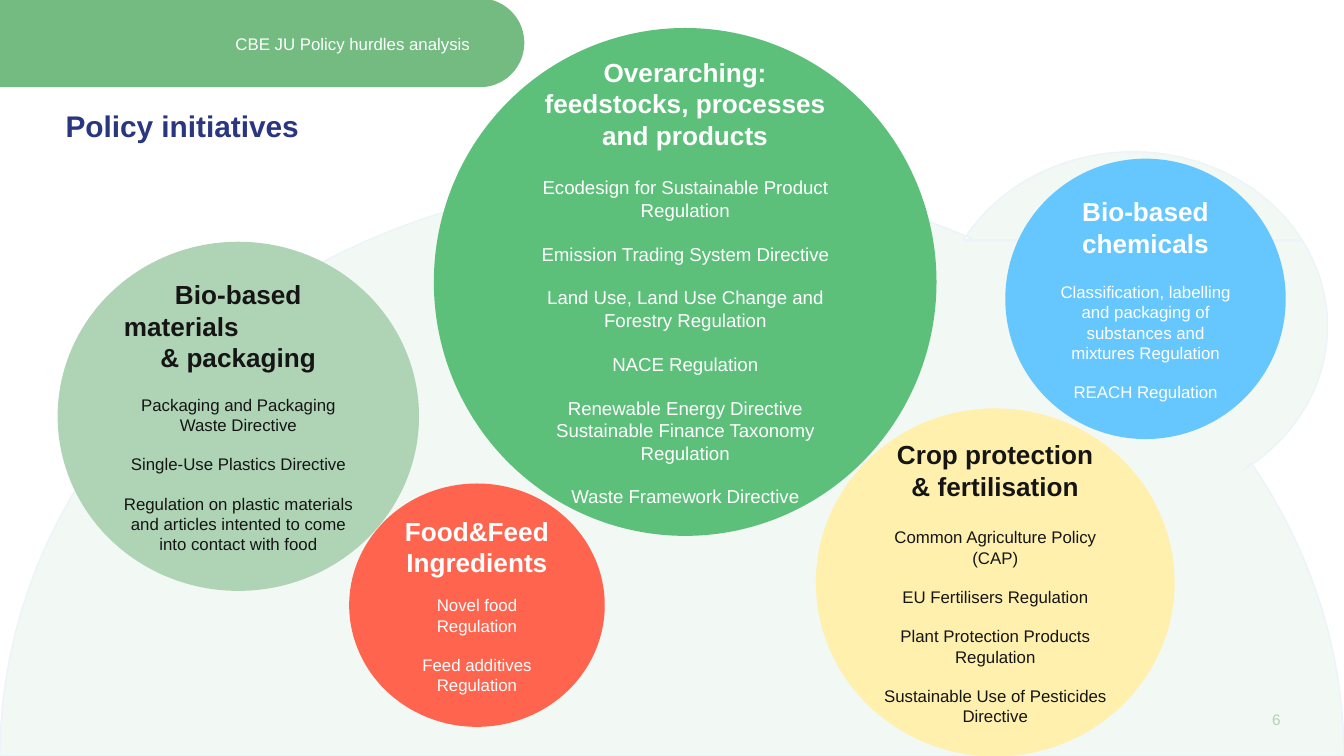
"""Builds the policy initiatives slide with one circle per sector."""
import math
from dataclasses import dataclass

import pptx
import pptx.dml.color
import pptx.enum.shapes
import pptx.enum.text
import pptx.oxml
import pptx.oxml.ns
import pptx.util

Cm, Pt = pptx.util.Cm, pptx.util.Pt
RGB = pptx.dml.color.RGBColor.from_string
Align = pptx.enum.text.PP_ALIGN


@dataclass(frozen=True)
class Theme:
    font: str = "Arial"
    white: str = "FFFFFF"
    ink: str = "151515"
    navy: str = "2A3680"
    banner: str = "73BB80"
    sage: str = "AED3B5"
    outline: str = "ECF4FA"
    green: str = "5DC07A"
    blue: str = "66C7FF"
    red: str = "FF644E"
    yellow: str = "FFF0AD"
    title: float = 16
    heading: float = 14
    large: float = 10
    small: float = 9
    number: float = 8.2
    line_height: float = 1.15


def arc(center, radii, start, end):
    """Points in EMU along an ellipse, with angles counter-clockwise in degrees."""
    steps = 48
    angles = [math.radians(start + (end - start) * i / steps) for i in range(steps + 1)]
    return [(Cm(center[0] + radii[0] * math.cos(a)), Cm(center[1] - radii[1] * math.sin(a)))
            for a in angles]


def write(paragraph, text, size, color, bold, paragraph_format):
    """Fill a paragraph with one formatted run."""
    for name, value in paragraph_format.items():
        setattr(paragraph, name, value)
    run = paragraph.add_run()
    run.text = text
    for name, value in {"name": theme.font, "size": Pt(size), "bold": bold}.items():
        setattr(run.font, name, value)
    run.font.color.rgb = RGB(color)


theme = Theme()
deck = pptx.Presentation()
deck.slide_width, deck.slide_height = Cm(25.4), Cm(14.29)
slide = deck.slides.add_slide(deck.slide_layouts[6])
shapes = slide.shapes

banner_outline = [(Cm(0), Cm(-0.03))] + arc((9.07, 0.81), (0.84, 0.84), 90, -90) + [(Cm(0), Cm(1.65))]

dome = {"center": (12.7, 14.29), "radii": (12.7, 10.93)}
hill = {"center": (21.41, 6.17), "radii": (3.68, 3.3)}
landscape_outline = (arc(**dome, start=180, end=63.5) + arc(**hill, start=150.5, end=150.5)
                     + arc(**hill, start=29.5, end=-55.5) + arc(**dome, start=30.5, end=0))
hill_top = arc(**hill, start=150.5, end=29.5)

for contours, color, opacity in (
    ([banner_outline], theme.banner, 100),
    ([landscape_outline, hill_top], theme.sage, 15),
):
    builder = shapes.build_freeform(*contours[0][0])
    builder.add_line_segments(contours[0][1:])
    for contour in contours[1:]:
        builder.move_to(*contour[0])
        builder.add_line_segments(contour[1:])
    backdrop = builder.convert_to_shape()
    backdrop.shadow.inherit = False
    backdrop.fill.solid()
    backdrop.fill.fore_color.rgb = RGB(color)
    if opacity == 100:
        backdrop.line.fill.background()
    else:
        backdrop.line.color.rgb = RGB(theme.outline)
        backdrop.line.width = Pt(0.75)
        tint = backdrop._element.spPr.find(pptx.oxml.ns.qn("a:solidFill"))[0]
        tint.append(pptx.oxml.parse_xml(
            f'<a:alpha {pptx.oxml.ns.nsdecls("a")} val="{opacity * 1000}"/>'))

for text, box, size, color, bold, alignment in (
    ("Policy initiatives", (1.24, 1.93, 9.53, 0.97), theme.title, theme.navy, True, Align.LEFT),
    ("CBE JU Policy hurdles analysis", (4.45, 0.65, 5, 0.41), theme.small, theme.white, False, Align.LEFT),
    ("6", (23.72, 13.36, 0.81, 0.51), theme.number, theme.sage, False, Align.CENTER),
):
    frame = shapes.add_textbox(*map(Cm, box)).text_frame
    for name, value in {
        "word_wrap": True, "vertical_anchor": pptx.enum.text.MSO_ANCHOR.MIDDLE,
        "margin_left": 0, "margin_right": 0, "margin_top": 0, "margin_bottom": 0,
    }.items():
        setattr(frame, name, value)
    write(frame.paragraphs[0], text, size, color, bold, {"alignment": alignment, "line_spacing": 0.9})

sectors = [
    ((8.2, 0.53, 9.5, 9.6), theme.green, theme.white, theme.large, 12,
     ["Overarching:", "feedstocks, processes and products"],
     [["Ecodesign for Sustainable Product Regulation"],
      ["Emission Trading System Directive"],
      ["Land Use, Land Use Change and Forestry Regulation"],
      ["NACE Regulation"],
      ["Renewable Energy Directive", "Sustainable Finance Taxonomy Regulation"],
      ["Waste Framework Directive"]]),
    ((19, 3, 5.3, 5.3), theme.blue, theme.white, theme.small, 11,
     ["Bio-based chemicals"],
     [["Classification, labelling and packaging of substances and mixtures Regulation"],
      ["REACH Regulation"]]),
    ((1.09, 4.57, 6.83, 6.6), theme.sage, theme.ink, theme.small, 10,
     ["Bio-based", "materials", "& packaging"],
     [["Packaging and Packaging Waste Directive"],
      ["Single-Use Plastics Directive"],
      ["Regulation on plastic materials and articles intented to come into contact with food"]]),
    ((6.6, 9.14, 4.83, 4.6), theme.red, theme.white, theme.small, 8,
     ["Food&Feed Ingredients"],
     [["Novel food Regulation"], ["Feed additives Regulation"]]),
    ((15.42, 7.72, 6.78, 6.58), theme.yellow, theme.ink, theme.small, 12,
     ["Crop protection", "& fertilisation"],
     [["Common Agriculture Policy (CAP)"],
      ["EU Fertilisers Regulation"],
      ["Plant Protection Products Regulation"],
      ["Sustainable Use of Pesticides Directive"]]),
]

for box, fill, ink, size, heading_gap, heading, groups in sectors:
    circle = shapes.add_shape(pptx.enum.shapes.MSO_SHAPE.OVAL, *map(Cm, box))
    circle.shadow.inherit = False
    circle.fill.solid()
    circle.fill.fore_color.rgb = RGB(fill)
    circle.line.fill.background()
    frame = circle.text_frame
    frame.word_wrap = True
    frame.vertical_anchor = pptx.enum.text.MSO_ANCHOR.MIDDLE
    lines = [(text, theme.heading, True, 0) for text in heading]
    for group_index, group in enumerate(groups):
        gap = size if group_index else heading_gap
        lines += [(text, size, False, 0 if i else gap) for i, text in enumerate(group)]
    for i, (text, text_size, bold, gap) in enumerate(lines):
        paragraph = frame.add_paragraph() if i else frame.paragraphs[0]
        alignment = Align.LEFT if text == "materials" else Align.CENTER
        layout = {"alignment": alignment}
        if gap:
            layout["space_before"] = Pt(round(gap * theme.line_height, 1))
        write(paragraph, text, text_size, ink, bold, layout)

deck.save("out.pptx")
